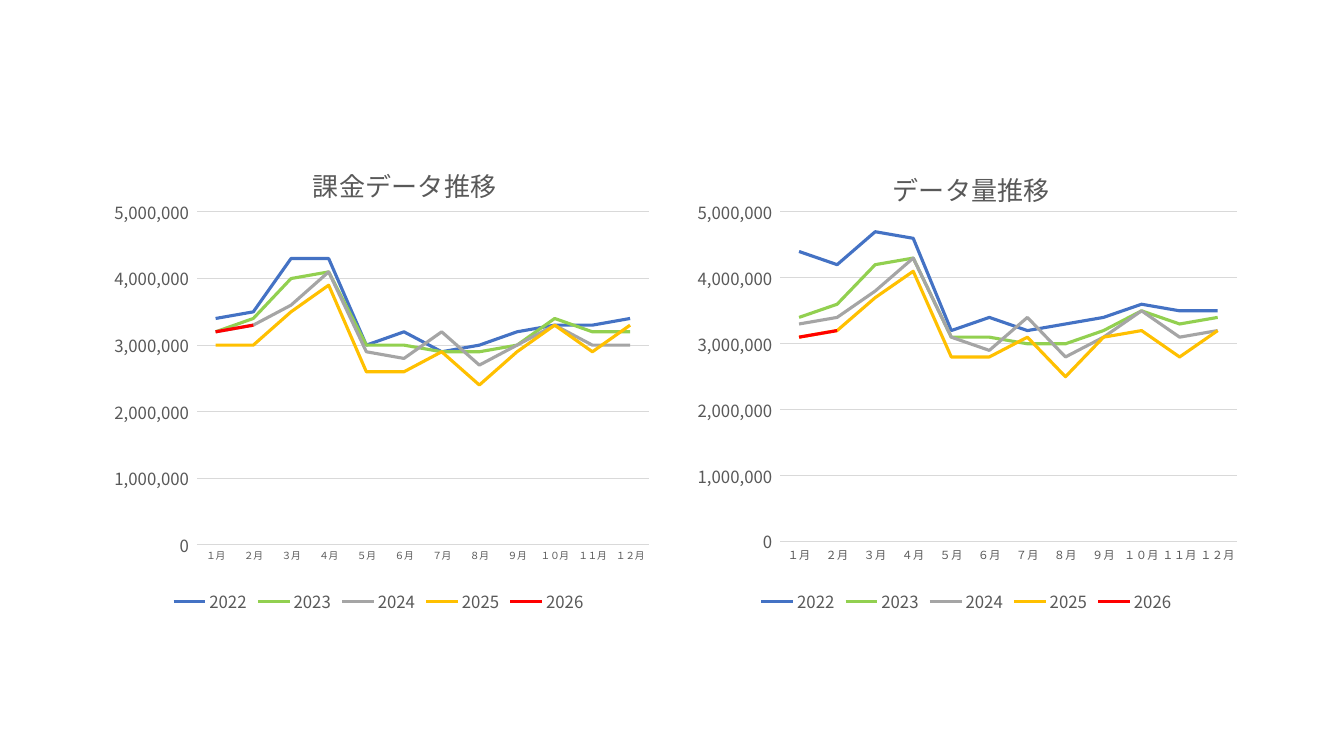
"""Build a slide with two line charts that compare monthly data by year."""
from lxml import etree
from pptx import Presentation
from pptx.chart.data import CategoryChartData
from pptx.dml.color import RGBColor
from pptx.enum.chart import XL_CHART_TYPE, XL_LEGEND_POSITION, XL_MARKER_STYLE, XL_TICK_MARK
from pptx.oxml.ns import qn
from pptx.util import Inches, Pt

LINE_CHART = XL_CHART_TYPE.LINE
BOTTOM = XL_LEGEND_POSITION.BOTTOM
NO_MARKER = XL_MARKER_STYLE.NONE
NO_TICK = XL_TICK_MARK.NONE

FONT = "Noto Sans CJK JP"
NUMBER_FORMAT = r"#,##0_);[Red]\(#,##0\)"
VALUE_UNIT = 100000
COLORS = {
    "text": "595959",
    "grid": "D9D9D9",
    "2022": "4472C4",
    "2023": "92D050",
    "2024": "A5A5A5",
    "2025": "FFC000",
    "2026": "FF0000",
}
MONTHS = ["１月", "２月", "３月", "４月", "５月", "６月",
          "７月", "８月", "９月", "１０月", "１１月", "１２月"]
CHARTS = [
    {
        "title": "データ量推移",
        "left": 6.75,
        "month_size": 8,
        "title_layout": {"x": 0.363, "y": 0.05},
        "plot_layout": {"x": 0.174, "y": 0.154, "w": 0.799, "h": 0.687},
        "series": {
            "2022": [44, 42, 47, 46, 32, 34, 32, 33, 34, 36, 35, 35],
            "2023": [34, 36, 42, 43, 31, 31, 30, 30, 32, 35, 33, 34],
            "2024": [33, 34, 38, 43, 31, 29, 34, 28, 31, 35, 31, 32],
            "2025": [31, 32, 37, 41, 28, 28, 31, 25, 31, 32, 28, 32],
            "2026": [31, 32],
        },
    },
    {
        "title": "課金データ推移",
        "left": 0.92,
        "month_size": 7,
        "title_layout": {"x": 0.377, "y": 0.041},
        "plot_layout": {"x": 0.182, "y": 0.154, "w": 0.791, "h": 0.694},
        "series": {
            "2022": [34, 35, 43, 43, 30, 32, 29, 30, 32, 33, 33, 34],
            "2023": [32, 34, 40, 41, 30, 30, 29, 29, 30, 34, 32, 32],
            "2024": [32, 33, 36, 41, 29, 28, 32, 27, 30, 33, 30, 30],
            "2025": [30, 30, 35, 39, 26, 26, 29, 24, 29, 33, 29, 33],
            "2026": [32, 33],
        },
    },
]


def style_font(font, size):
    font.name = FONT
    font.size = Pt(size)
    font.bold = False
    font.color.rgb = RGBColor.from_string(COLORS["text"])
    latin = font._element.find(qn("a:latin")) if hasattr(font, "_element") else font._rPr.find(qn("a:latin"))
    east_asian = etree.Element(qn("a:ea"))
    east_asian.set("typeface", FONT)
    latin.addnext(east_asian)


def style_line(line, color, width):
    line.color.rgb = RGBColor.from_string(COLORS[color])
    line.width = Pt(width)


def set_layout(parent, index, position, inner=False):
    for existing in parent.findall(qn("c:layout")):
        parent.remove(existing)
    layout = etree.Element(qn("c:layout"))
    manual = etree.SubElement(layout, qn("c:manualLayout"))
    settings = {"layoutTarget": "inner"} if inner else {}
    settings.update({f"{axis}Mode": "edge" for axis in "xy"})
    settings.update(position)
    for name, value in settings.items():
        etree.SubElement(manual, qn(f"c:{name}")).set("val", str(value))
    parent.insert(index, layout)


def style_title(chart, content):
    title = chart.chart_title
    title.text_frame.text = content["title"]
    style_font(title.text_frame.paragraphs[0].font, 18.6)
    set_layout(title._element, 1, content["title_layout"])


def style_axes(chart, month_size):
    months, values = chart.category_axis, chart.value_axis
    for axis, size in ((months, month_size), (values, 12)):
        axis.major_tick_mark = NO_TICK
        axis.minor_tick_mark = NO_TICK
        style_font(axis.tick_labels.font, size)
    style_line(months.format.line, "grid", 0.75)
    values.format.line.fill.background()
    values.minimum_scale = 0
    values.maximum_scale = 5000000
    values.major_unit = 1000000
    values.has_major_gridlines = True
    style_line(values.major_gridlines.format.line, "grid", 0.75)
    values.tick_labels.number_format = NUMBER_FORMAT
    values.tick_labels.number_format_is_linked = False


def add_year_chart(slide, content):
    data = CategoryChartData(number_format=NUMBER_FORMAT)
    data.categories = MONTHS
    for year, amounts in content["series"].items():
        missing = [None] * (len(MONTHS) - len(amounts))
        data.add_series(year, [amount * VALUE_UNIT for amount in amounts] + missing)
    chart = slide.shapes.add_chart(
        LINE_CHART, Inches(content["left"]), Inches(1.37), Inches(5.67), Inches(4.76), data
    ).chart
    chart.font.name = FONT
    chart.font.size = Pt(10)
    style_title(chart, content)
    style_axes(chart, content["month_size"])
    set_layout(chart._chartSpace.chart.plotArea, 0, content["plot_layout"], inner=True)
    chart.has_legend = True
    chart.legend.position = BOTTOM
    chart.legend.include_in_layout = False
    style_font(chart.legend.font, 12)
    plot = chart.plots[0]
    plot.vary_by_categories = False
    for series in plot.series:
        series.smooth = False
        series.marker.style = NO_MARKER
        style_line(series.format.line, series.name, 2.25)


def main():
    presentation = Presentation()
    presentation.slide_width = Inches(13.33)
    presentation.slide_height = Inches(7.5)
    slide = presentation.slides.add_slide(presentation.slide_layouts[6])
    for content in CHARTS:
        add_year_chart(slide, content)
    presentation.save("out.pptx")


if __name__ == "__main__":
    main()
